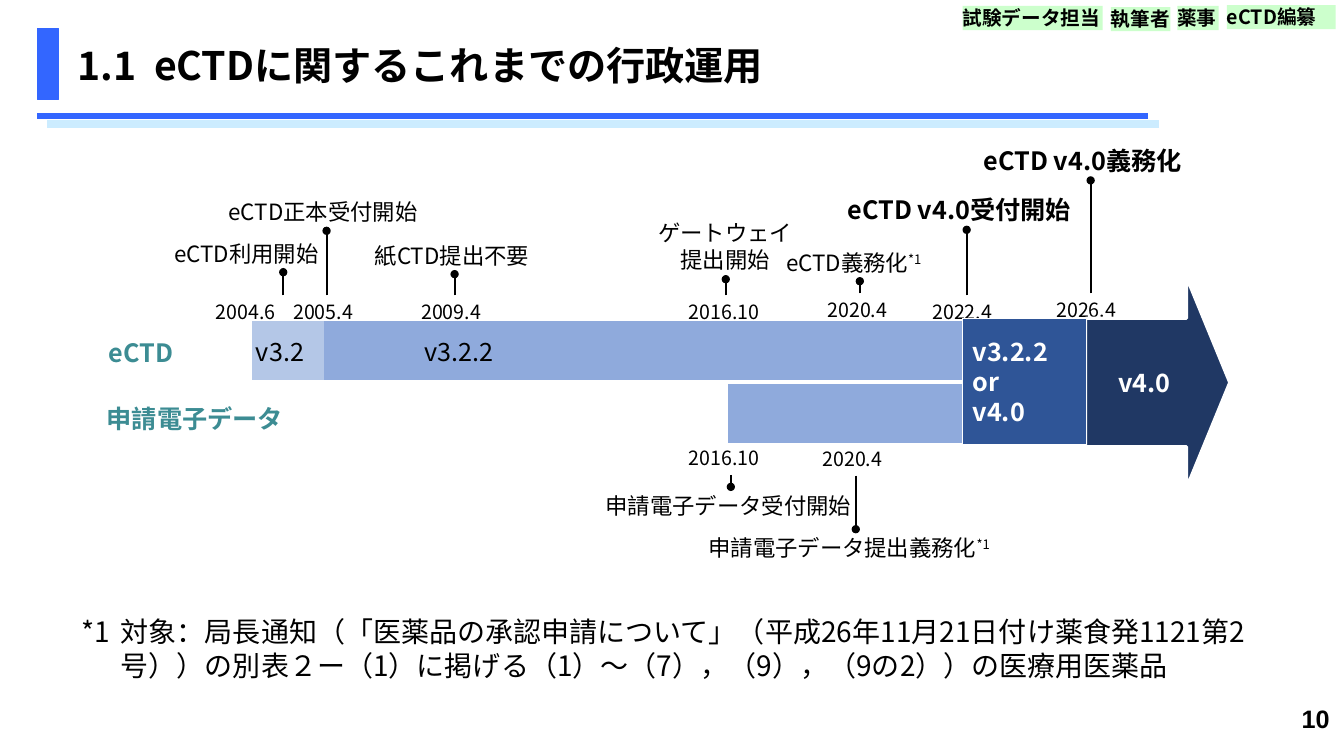
import pptx
import pptx.dml.color
import pptx.enum.shapes
import pptx.enum.text
import pptx.oxml.ns
import pptx.util
from lxml import etree

COLORS = {
    "black": "000000", "white": "FFFFFF", "blue": "3366FF", "sky": "CCECFF",
    "teal": "3C8C93", "mint": "CCFFCC", "v3.2": "B4C7E7", "v3.2.2": "8FAADC",
    "both": "2F5597", "v4.0": "203864",
}
FONT = "Noto Sans CJK JP"
CELL = pptx.util.Inches(0.1)  # the slide is a grid of 133.3 columns by 75 rows
NO_TABLE_STYLE = "{2D5ABB26-0587-4C30-8999-92F81FD0307C}"
ALIGN = pptx.enum.text.PP_ALIGN
MIDDLE = pptx.enum.text.MSO_ANCHOR.MIDDLE
SHAPE = pptx.enum.shapes.MSO_SHAPE
qn = pptx.oxml.ns.qn


def grid(*cells):
    """Turn grid columns and rows into slide lengths."""
    return [round(cell * CELL) for cell in cells]


def write(frame, text, size, color="black", bold=False, align=ALIGN.LEFT, font=FONT, hanging=0):
    """Fill a text frame with evenly styled paragraphs; hanging is in grid columns."""
    frame.text = text
    for paragraph in frame.paragraphs:
        paragraph.alignment = align
        paragraph.font.size = pptx.util.Pt(size)
        paragraph.font.bold = bold
        paragraph.font.color.rgb = pptx.dml.color.RGBColor.from_string(COLORS[color])
        paragraph.font.name = font
        etree.SubElement(paragraph.font._element, qn("a:ea")).set("typeface", font)
        if hanging:
            indent, = grid(hanging)
            properties = paragraph._p.get_or_add_pPr()
            properties.set("marL", str(indent))
            properties.set("indent", str(-indent))


presentation = pptx.Presentation()
presentation.slide_width, presentation.slide_height = grid(133.33, 75)
slide = presentation.slides.add_slide(presentation.slide_layouts[6])
shapes = slide.shapes

# Title
title = shapes.add_textbox(*grid(6.7, 2.1, 120, 8.7)).text_frame
title.word_wrap = True
title.vertical_anchor = MIDDLE
write(title, "1.1\teCTDに関するこれまでの行政運用", 28, bold=True, hanging=7.6)

# Version bars: top row, column widths, and text, left margin and fill of each cell
bars = [
    (31.8, [8.7, 7.1, 79.4], [("", 1, "white"), ("v3.2", 0.4, "v3.2"), ("v3.2.2", 10, "v3.2.2")]),
    (38.1, [55.9, 39.4], [("", 1, "white"), ("", 1, "v3.2.2")]),
]
for top, widths, cells in bars:
    table = shapes.add_table(1, len(widths), *grid(16.3, top, sum(widths), 5.9)).table
    table.first_row = table.horz_banding = False
    table._tbl.tblPr.find(qn("a:tableStyleId")).text = NO_TABLE_STYLE
    for column, width, cell, (text, margin, fill) in zip(table.columns, widths, table.iter_cells(), cells):
        column.width, = grid(width)
        cell.margin_left, = grid(margin)
        cell.vertical_anchor = MIDDLE
        cell.fill.solid()
        cell.fill.fore_color.rgb = pptx.dml.color.RGBColor.from_string(COLORS[fill])
        write(cell.text_frame, text, 18)

# Milestones: date, its centre, stem column, stem start and end,
# label, label left, top and width, emphasis, footnote mark
milestones = [
    ("2004.6", 24.8, 28.1, 29.3, 27, "eCTD利用開始", 16.3, 23.3, 16.9, False, ""),
    ("2005.4", 32.5, 32.4, 29.3, 22.9, "eCTD正本受付開始", 21.7, 19.2, 21.3, False, ""),
    ("2009.4", 45.2, 45.1, 29.3, 27.2, "紙CTD提出不要", 36.2, 23.5, 17.8, False, ""),
    ("2016.10", 72.4, 72, 29.3, 27.7, "ゲートウェイ\v提出開始", 64.2, 21.3, 15.5, False, ""),
    ("2020.4", 85.5, 85.3, 29.1, 27.9, "eCTD義務化", 77, 24.2, 16.5, False, "*1"),
    ("2022.4", 95.9, 95.9, 29.3, 22.8, "eCTD v4.0受付開始", 83.1, 18.8, 25.7, True, ""),
    ("2026.4", 108.2, 108.2, 29.1, 17.9, "eCTD v4.0義務化", 96.6, 13.9, 23.2, True, ""),
    ("2016.10", 72.4, 72.5, 47.1, 48.3, "申請電子データ受付開始", 59.1, 48.3, 26.7, False, ""),
    ("2020.4", 85, 84.9, 47.2, 52.5, "申請電子データ提出義務化", 69.3, 52.5, 31.3, False, "*1"),
]
DATE_HEIGHT = 3.4
lines = [
    (113.9, 11.5, 3.7, 11.5, "blue", 4.5, False),
    (115, 12.3, 4.7, 12.3, "sky", 6, False),
]
for date, centre, stem, start, end, label, left, top, width, strong, mark in milestones:
    date_width = 10.1 if len(date) > 6 else 8.8
    date_top = start if end < start else start - DATE_HEIGHT
    date_box = shapes.add_textbox(*grid(centre - date_width / 2, date_top, date_width, DATE_HEIGHT))
    write(date_box.text_frame, date, 14)

    label_box = shapes.add_textbox(*grid(left, top, width, 6.4 if "\v" in label else 3.7))
    write(label_box.text_frame, label, 18 if strong else 16, bold=strong,
          align=ALIGN.CENTER if "\v" in label else ALIGN.LEFT)
    if mark:
        run = label_box.text_frame.paragraphs[0].add_run()
        run.text = mark
        run.font._element.set("baseline", "30000")
    for box in (date_box, label_box):
        box.text_frame.word_wrap = label.startswith("紙") and box is label_box
        box.text_frame.auto_size = pptx.enum.text.MSO_AUTO_SIZE.SHAPE_TO_FIT_TEXT
    lines.append((stem, start, stem, end, "black", 1.5, True))

# Header rules and milestone stems
for begin_x, begin_y, end_x, end_y, color, weight, dotted in lines:
    line = shapes.add_connector(pptx.enum.shapes.MSO_CONNECTOR.STRAIGHT,
                                *grid(begin_x, begin_y, end_x, end_y))
    line.line.color.rgb = pptx.dml.color.RGBColor.from_string(COLORS[color])
    line.line.width = pptx.util.Pt(weight)
    if dotted:
        etree.SubElement(line.line._get_or_add_ln(), qn("a:tailEnd")).set("type", "oval")
    etree.SubElement(line._element.spPr, qn("a:effectLst"))

# Filled shapes: preset, box, fill, outline colour and width, text, size, text colour, alignment
blocks = [
    (SHAPE.RECTANGLE, (3.7, 2.8, 2.1, 7.1), "blue", "blue", 0.75, "", 18, "white", ALIGN.LEFT),
    (SHAPE.RIGHT_ARROW, (107.7, 27.5, 14.3, 20.9), "v4.0", "white", 2.25, "v4.0", 18, "white", ALIGN.CENTER),
    (SHAPE.RECTANGLE, (95.5, 31.6, 12.3, 12.5), "both", "white", 0.75,
     "v3.2.2\nor\nv4.0", 18, "white", ALIGN.LEFT),
]
tags = [("試験データ担当", 95.5, 0.6, 13.9), ("執筆者", 110.2, 0.7, 5.9),
        ("薬事", 116.8, 0.6, 4.1), ("eCTD編纂", 121.7, 0.5, 10.8)]
for text, left, top, width in tags:
    blocks.append((SHAPE.RECTANGLE, (left, top, width, 2.4), "mint", None, 0, text, 14, "black", ALIGN.LEFT))
for preset, box, fill, outline, weight, text, size, color, align in blocks:
    block = shapes.add_shape(preset, *grid(*box))
    block.shadow.inherit = False
    block.fill.solid()
    block.fill.fore_color.rgb = pptx.dml.color.RGBColor.from_string(COLORS[fill])
    frame = block.text_frame
    if outline:
        block.line.color.rgb = pptx.dml.color.RGBColor.from_string(COLORS[outline])
        block.line.width = pptx.util.Pt(weight)
        frame.vertical_anchor = MIDDLE
    else:
        block.line.fill.background()
        frame.vertical_anchor = pptx.enum.text.MSO_ANCHOR.TOP
        frame.margin_left = frame.margin_right = frame.margin_top = frame.margin_bottom = 0
    if preset == SHAPE.RIGHT_ARROW:
        block.adjustments[0], block.adjustments[1] = 0.61, 0.3
    if text:
        write(frame, text, size, color, True, align)

# Row headings, footnote and page number
FOOTNOTE = ("*1\t対象：局長通知（「医薬品の承認申請について」（平成26年11月21日付け薬食発1121第2号））"
            "の別表２ー（1）に掲げる（1）～（7），（9），（9の2））の医療用医薬品")
notes = [
    ((9.8, 33, 9, 4), "eCTD", dict(size=18, color="teal", bold=True)),
    ((9.6, 39.5, 20.2, 4), "申請電子データ", dict(size=18, color="teal", bold=True)),
    ((7.1, 60.5, 122.8, 7.7), FOOTNOTE, dict(size=20, hanging=3.9)),
    ((120.1, 69.3, 12.8, 5.2), "10", dict(size=18, bold=True, align=ALIGN.RIGHT, font="Arial")),
]
for box, text, style in notes:
    frame = shapes.add_textbox(*grid(*box)).text_frame
    frame.word_wrap = True
    write(frame, text, **style)

presentation.save("out.pptx")
